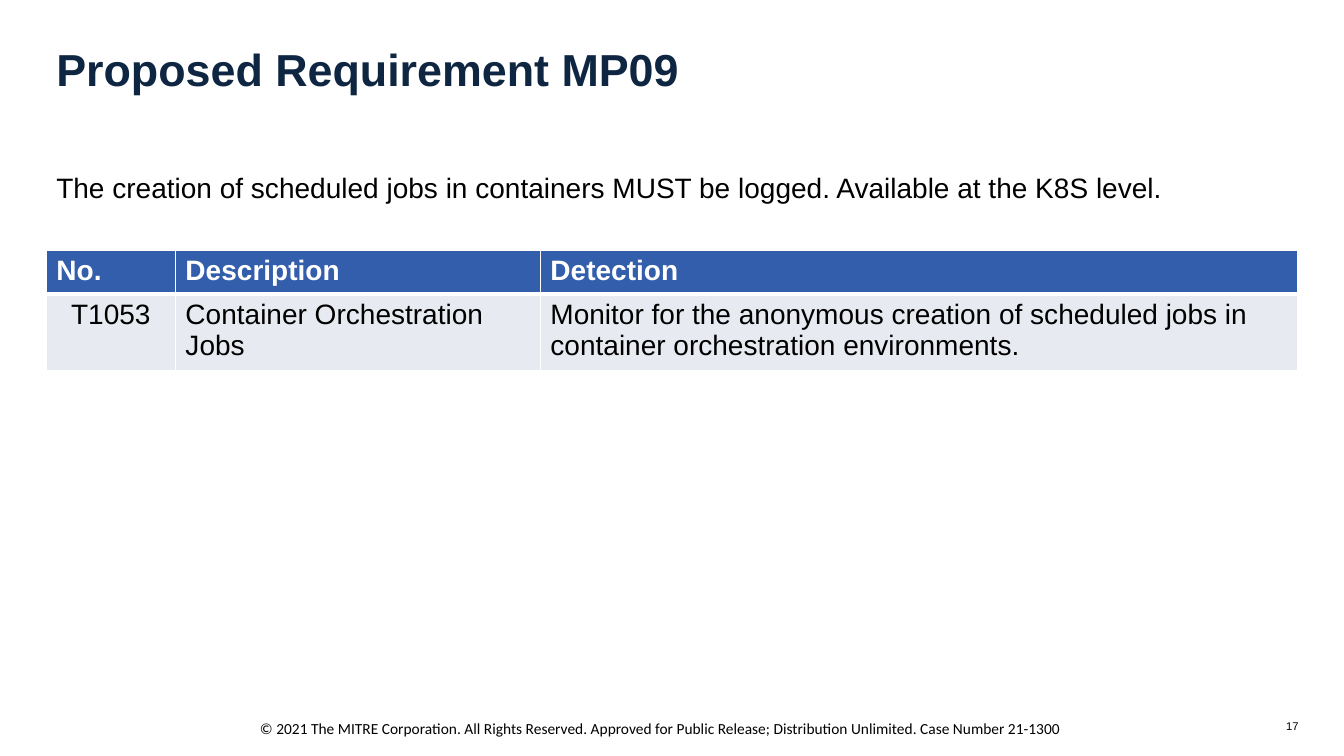
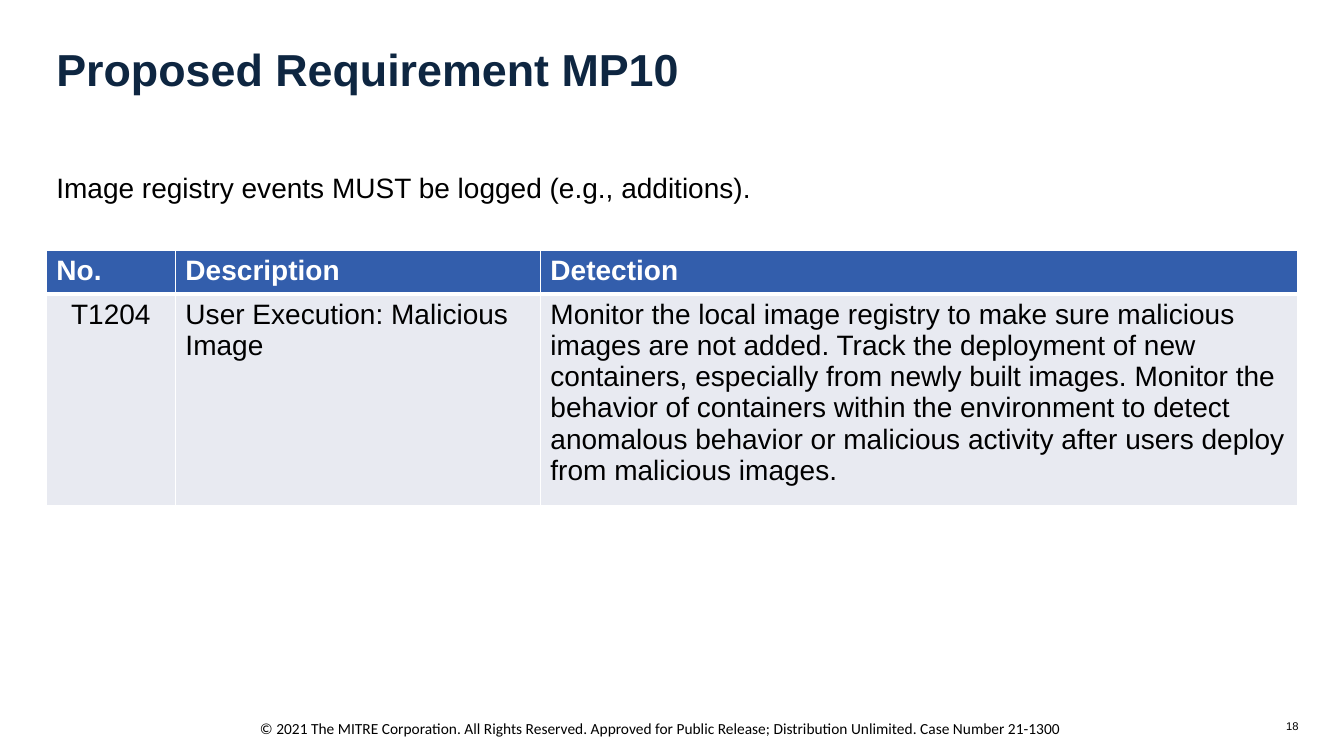
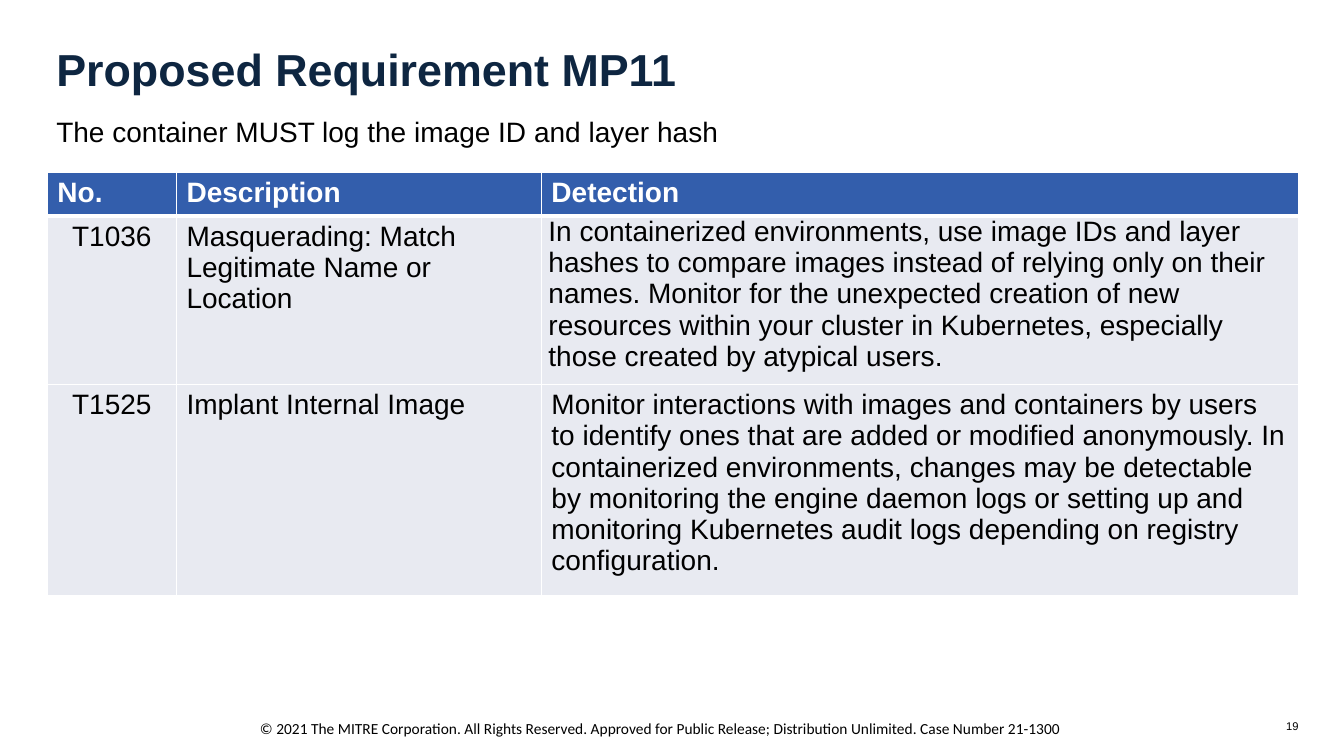
from pptx import Presentation, util as u
from pptx.dml.color import RGBColor
from pptx.enum import text
from lxml import etree

INK = {"title": "0E2641", "body": "000000", "head": "335EAC",
       "row": "E8EAF1", "white": "FFFFFF"}
NS = "http://schemas.openxmlformats.org/drawingml/2006/main"
LEFT, WIDE = 0.46, 12.41
COLS = [1.28, 3.62, 7.51]
HEADS = ["No.", "Description", "Detection"]
ROW = 0.41  # least height; rows grow with their text
RIGHT, MID = text.PP_ALIGN.RIGHT, text.PP_ALIGN.CENTER
FOOT = ("© 2021 The MITRE Corporation. All Rights Reserved. Approved for Public Release; "
        "Distribution Unlimited. Case Number 21-1300")

# Each page: code, rule, top of rule, left, top and height of table, rows
# Each row: number, description, detection, tight detection cell
PAGES = [
    ("MP09", "The creation of scheduled jobs in containers MUST be logged. "
     "Available at the K8S level.", 1.64, (0.46, 2.48, 1.2), [
         ("T1053", "Container Orchestration Jobs",
          "Monitor for the anonymous creation of scheduled jobs in container "
          "orchestration environments.", False)]),
    ("MP10", "Image registry events MUST be logged (e.g., additions).", 1.64,
     (0.46, 2.48, 2.53), [
        ("T1204", "User Execution: Malicious Image",
         "Monitor the local image registry to make sure malicious images are not added. "
         "Track the deployment of new containers, especially from newly built images. "
         "Monitor the behavior of containers within the environment to detect anomalous "
         "behavior or malicious activity after users deploy from malicious images.", False)]),
    ("MP11", "The container MUST log the image ID and layer hash", 1.09,
     (0.47, 1.71, 4.2), [
        ("T1036", "Masquerading: Match Legitimate Name or Location",
         "In containerized environments, use image IDs and layer hashes to compare images "
         "instead of relying only on their names. Monitor for the unexpected creation of new "
         "resources within your cluster in Kubernetes, especially those created by atypical "
         "users.", True),
        ("T1525", "Implant Internal Image",
         "Monitor interactions with images and containers by users to identify ones that are "
         "added or modified anonymously. In containerized environments, changes may be "
         "detectable by monitoring the engine daemon logs or setting up and monitoring "
         "Kubernetes audit logs depending on registry configuration.", False)]),
]


def write(frame, words, size, ink="body", bold=False, align=None, face="Arial"):
    """Put one styled run in the first paragraph and return that paragraph."""
    frame.word_wrap = True
    para = frame.paragraphs[0]
    para.alignment = align
    run = para.add_run()
    run.text = words
    run.font.name, run.font.size, run.font.bold = face, u.Pt(size), bold
    run.font.color.rgb = RGBColor.from_string(INK[ink])
    return para


def paint(cell, ink, top, base):
    """Fill a cell and rule it in white; top and base are widths in points."""
    cell.fill.solid()
    cell.fill.fore_color.rgb = RGBColor.from_string(INK[ink])
    props = cell._tc.get_or_add_tcPr()
    for i, (side, width) in enumerate(zip("LRTB", (1, 1, top, base))):
        edge = etree.Element(f"{{{NS}}}ln{side}", w=str(u.Pt(width)))
        fill = etree.SubElement(edge, f"{{{NS}}}solidFill")
        etree.SubElement(fill, f"{{{NS}}}srgbClr", val=INK["white"])
        props.insert(i, edge)


deck = Presentation()
deck.slide_width, deck.slide_height = u.Inches(13.33), u.Inches(7.5)

for page, (code, rule, rule_top, (left, top, high), rows) in enumerate(PAGES, 17):
    slide = deck.slides.add_slide(deck.slide_layouts[6])
    title, lead, foot, num = [
        slide.shapes.add_textbox(*map(u.Inches, box)).text_frame
        for box in ((LEFT, 0.42, WIDE, 0.59), (LEFT, rule_top, WIDE, 0.44),
                    (2.48, 7.08, 8.32, 0.29), (12.2, 7.14, 0.68, 0.13))]

    title.vertical_anchor = num.vertical_anchor = text.MSO_ANCHOR.MIDDLE
    write(title, f"Proposed Requirement {code}", 32, "title", True).line_spacing = 0.9
    write(lead, rule, 20)
    write(foot, FOOT, 11, face="Calibri")
    num.margin_left = num.margin_right = num.margin_top = num.margin_bottom = 0
    write(num, str(page), 8, align=RIGHT)

    holder = slide.shapes.add_table(len(rows) + 1, len(COLS), *map(
        u.Inches, (left, top, WIDE, high)))
    grid = holder.table
    grid.horz_banding = False
    for col, width in zip(grid.columns, COLS):
        col.width = u.Inches(width)
    for row in grid.rows:
        row.height = u.Inches(ROW)
    holder.height = u.Inches(high)

    for c, head in enumerate(HEADS):
        cell = grid.cell(0, c)
        paint(cell, "head", 1, 3)
        write(cell.text_frame, head, 20, "white", True)
    for r, (*words, tight) in enumerate(rows, 1):
        for c, word in enumerate(words):
            cell = grid.cell(r, c)
            paint(cell, "row", 3 if r == 1 else 1, 1)
            write(cell.text_frame, word, 20, align=None if c else MID)
        if tight:
            cell.margin_left = u.Inches(0.07)
            cell.margin_right = cell.margin_top = cell.margin_bottom = 0

deck.save("out.pptx")
